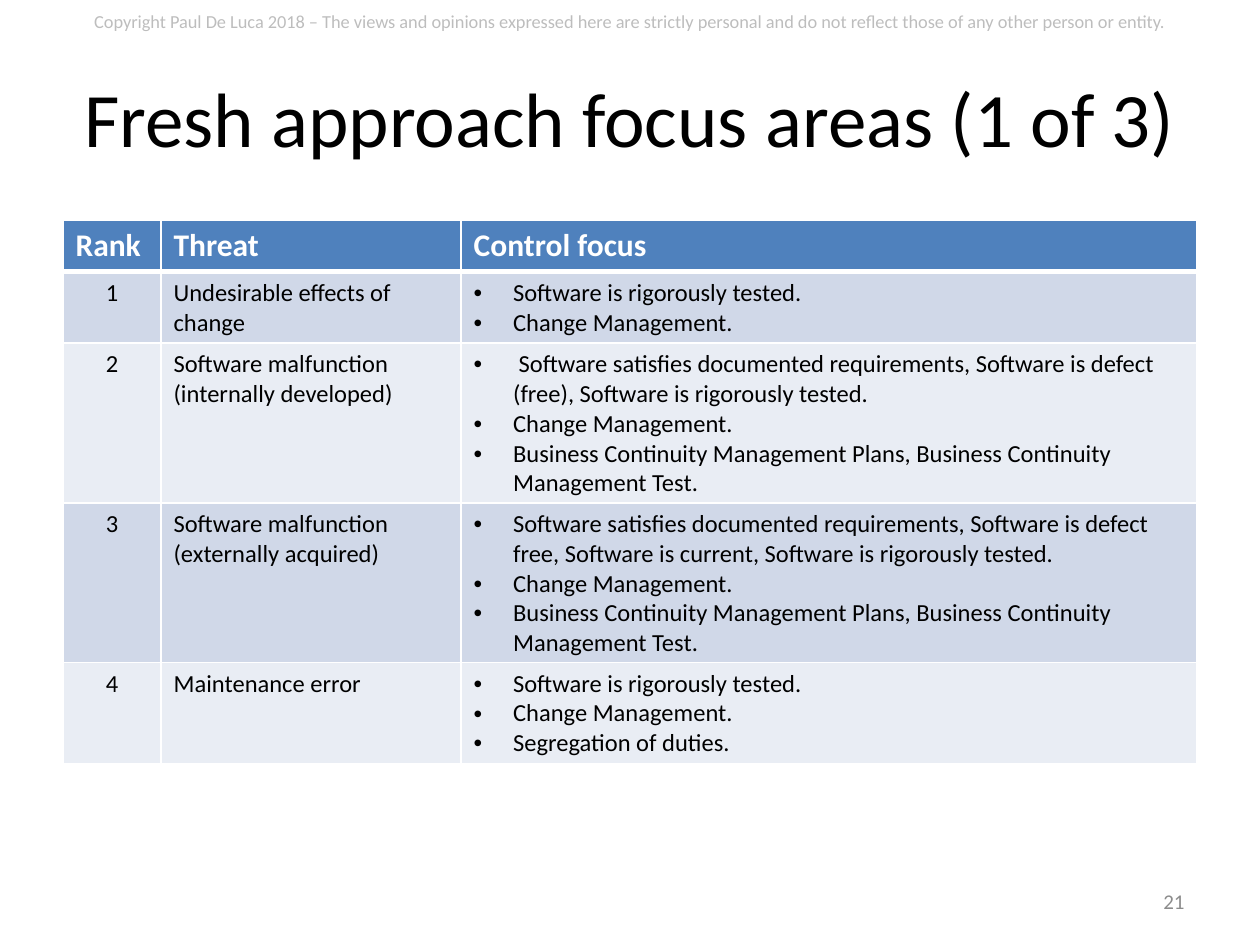
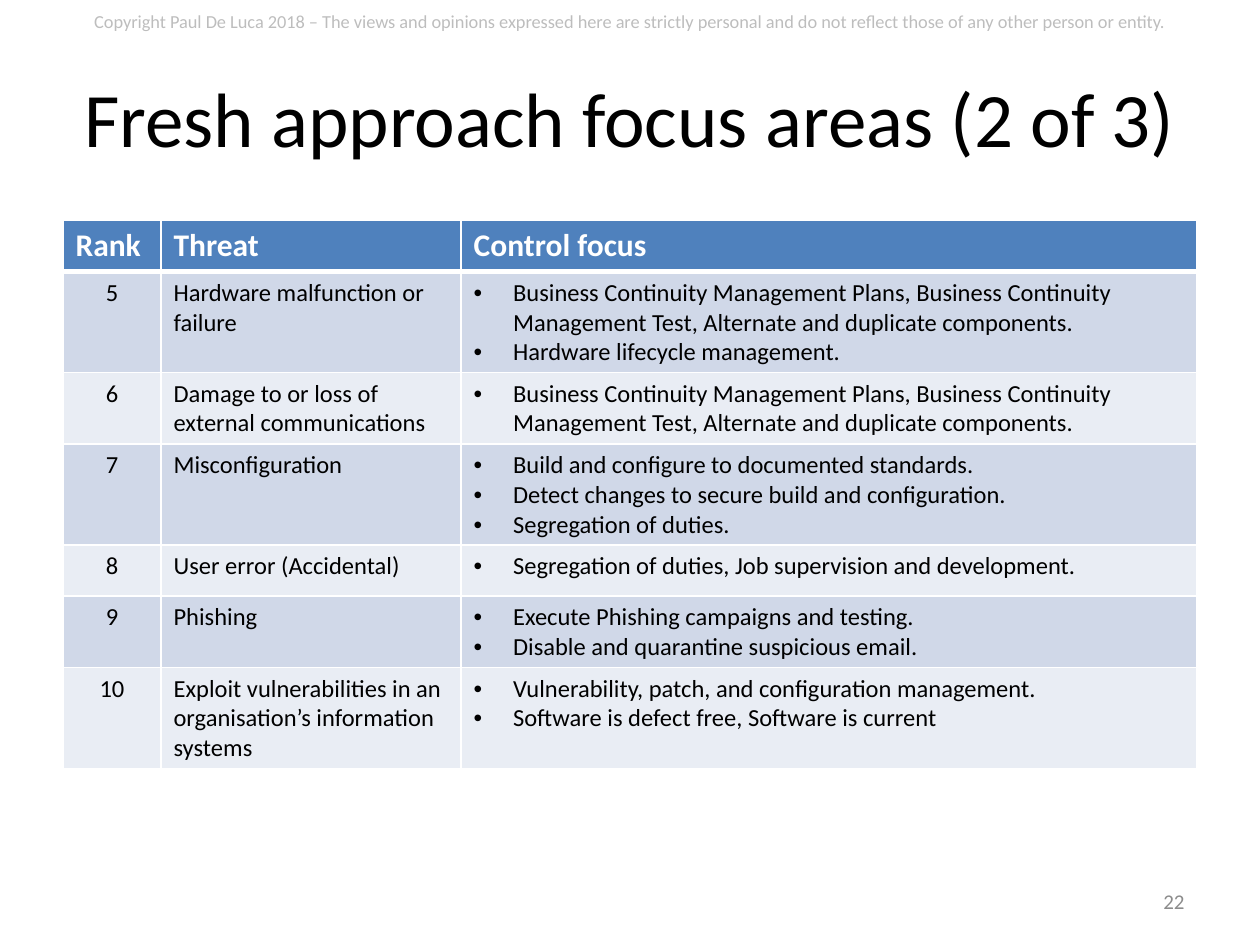
from dataclasses import dataclass

from lxml import etree
from pptx import Presentation
from pptx import util as u
from pptx.dml.color import RGBColor
from pptx.enum import text as tx
from pptx.oxml import ns

Pt = u.Pt


@dataclass(frozen=True)
class Theme:
    font: str = "Calibri"
    ink: str = "000000"
    paper: str = "FFFFFF"
    grey: str = "8C8C8C"
    head: str = "4F81BD"
    bands: tuple = ("D0D8E8", "E9EDF4")
    title: float = 44
    label: float = 18
    body: float = 14
    page: float = 12
    note: float = 10.5


T = Theme()
LEFT, CENTER, RIGHT = tx.PP_ALIGN.LEFT, tx.PP_ALIGN.CENTER, tx.PP_ALIGN.RIGHT
MARGIN, WIDTH = 36, 648
COLS = (56, 171.5, 420.5)
ROW = 29.2
INDENT = 22.5

NOTICE = ("Copyright Paul De Luca 2018 – The views and opinions expressed here are "
          "strictly personal and do not reflect those of any other person or entity.")
HEADS = ("Rank", "Threat", "Control focus")

TESTED = "Software is rigorously tested."
CHANGE = "Change Management."
DUTIES = "Segregation of duties."
PLANS = "Business Continuity Management Plans, Business Continuity Management Test"
SPARES = PLANS + ", Alternate and duplicate components."

FIRST = [
    ("Undesirable effects of change", [TESTED, CHANGE]),
    ("Software malfunction (internally developed)", [
        " Software satisfies documented requirements, Software is defect (free), " + TESTED,
        CHANGE, PLANS + "."]),
    ("Software malfunction (externally acquired)", [
        "Software satisfies documented requirements, Software is defect free, "
        "Software is current, " + TESTED,
        CHANGE, PLANS + "."]),
    ("Maintenance error", [TESTED, CHANGE, DUTIES]),
]
SECOND = [
    ("Hardware malfunction or failure", [SPARES, "Hardware lifecycle management."]),
    ("Damage to or loss of external communications", [SPARES]),
    ("Misconfiguration", [
        "Build and configure to documented standards.",
        "Detect changes to secure build and configuration.", DUTIES]),
    ("User error (Accidental)", ["Segregation of duties, Job supervision and development."]),
    ("Phishing", ["Execute Phishing campaigns and testing.",
                  "Disable and quarantine suspicious email."]),
    ("Exploit vulnerabilities in an organisation’s information systems", [
        "Vulnerability, patch, and configuration management.",
        "Software is defect free, Software is current"]),
]


def add_el(parent, tag, **attrs):
    return etree.SubElement(parent, ns.qn(tag), attrs)


def write(frame, lines, size=T.body, color=T.ink, bold=False, align=LEFT,
          bullet=False, alpha=None):
    """Fill a text frame, one paragraph a line; alpha is opacity in percent."""
    frame.word_wrap = True
    for i, line in enumerate(lines):
        para = frame.add_paragraph() if i else frame.paragraphs[0]
        para.alignment = align
        run = para.add_run()
        run.text = line
        font = run.font
        font.name, font.size, font.bold = T.font, Pt(size), bold
        font.color.rgb = RGBColor.from_string(color)
        if alpha:
            tint = run._r.rPr.find(".//" + ns.qn("a:srgbClr"))
            add_el(tint, "a:alpha", val=str(alpha * 1000))
        if bullet:
            props = para._p.get_or_add_pPr()
            props.set("marL", str(Pt(INDENT)))
            props.set("indent", str(-Pt(INDENT)))
            add_el(props, "a:buFont", typeface="Arial")
            add_el(props, "a:buChar", char="•")


def add_box(slide, area, line, anchor=tx.MSO_ANCHOR.TOP, **style):
    frame = slide.shapes.add_textbox(*map(Pt, area)).text_frame
    frame.vertical_anchor = anchor
    write(frame, [line], **style)


def add_title(slide, line):
    shape = slide.shapes.title
    shape.left, shape.top, shape.width, shape.height = map(Pt, (MARGIN, 21.6, WIDTH, 90))
    shape.text_frame.vertical_anchor = tx.MSO_ANCHOR.MIDDLE
    write(shape.text_frame, [line], size=T.title, align=CENTER)


def set_cell(cell, lines, fill, top=1, base=1, **style):
    """Write a cell with its fill and white rules; top and base are rule widths."""
    props = cell._tc.get_or_add_tcPr()
    for side, wide in zip("LRTB", (1, 1, top, base)):
        rule = add_el(props, "a:ln" + side, w=str(Pt(wide)))
        add_el(add_el(rule, "a:solidFill"), "a:srgbClr", val=T.paper)
    cell.fill.solid()
    cell.fill.fore_color.rgb = RGBColor.from_string(fill)
    write(cell.text_frame, lines, **style)


def add_grid(slide, threats, start):
    """Add the ranked threat table, numbering its rows from start."""
    count = len(threats) + 1
    grid = slide.shapes.add_table(count, len(COLS), Pt(MARGIN), Pt(126),
                                  Pt(WIDTH), Pt(ROW * count)).table
    for col, wide in zip(grid.columns, COLS):
        col.width = Pt(wide)
    for c, head in enumerate(HEADS):
        set_cell(grid.cell(0, c), [head], T.head, base=3,
                 size=T.label, color=T.paper, bold=True)
    for r, (threat, focus) in enumerate(threats, 1):
        look = dict(fill=T.bands[(r - 1) % 2], top=3 if r == 1 else 1)
        set_cell(grid.cell(r, 0), [str(start + r - 1)], align=CENTER, **look)
        set_cell(grid.cell(r, 1), [threat], **look)
        set_cell(grid.cell(r, 2), focus, bullet=True, **look)


def add_slide(deck, part, page, threats, start):
    slide = deck.slides.add_slide(deck.slide_layouts[5])
    add_box(slide, (MARGIN, 2.2, WIDTH, 20), NOTICE,
            size=T.note, align=CENTER, alpha=25)
    add_title(slide, f"Fresh approach focus areas ({part} of 3)")
    add_box(slide, (516, 500.5, 168, 28.8), str(page), anchor=tx.MSO_ANCHOR.MIDDLE,
            size=T.page, color=T.grey, align=RIGHT)
    add_grid(slide, threats, start)


def main():
    deck = Presentation()
    deck.slide_width, deck.slide_height = Pt(720), Pt(540)
    add_slide(deck, 1, 21, FIRST, 1)
    add_slide(deck, 2, 22, SECOND, len(FIRST) + 1)
    deck.save("out.pptx")


if __name__ == "__main__":
    main()
